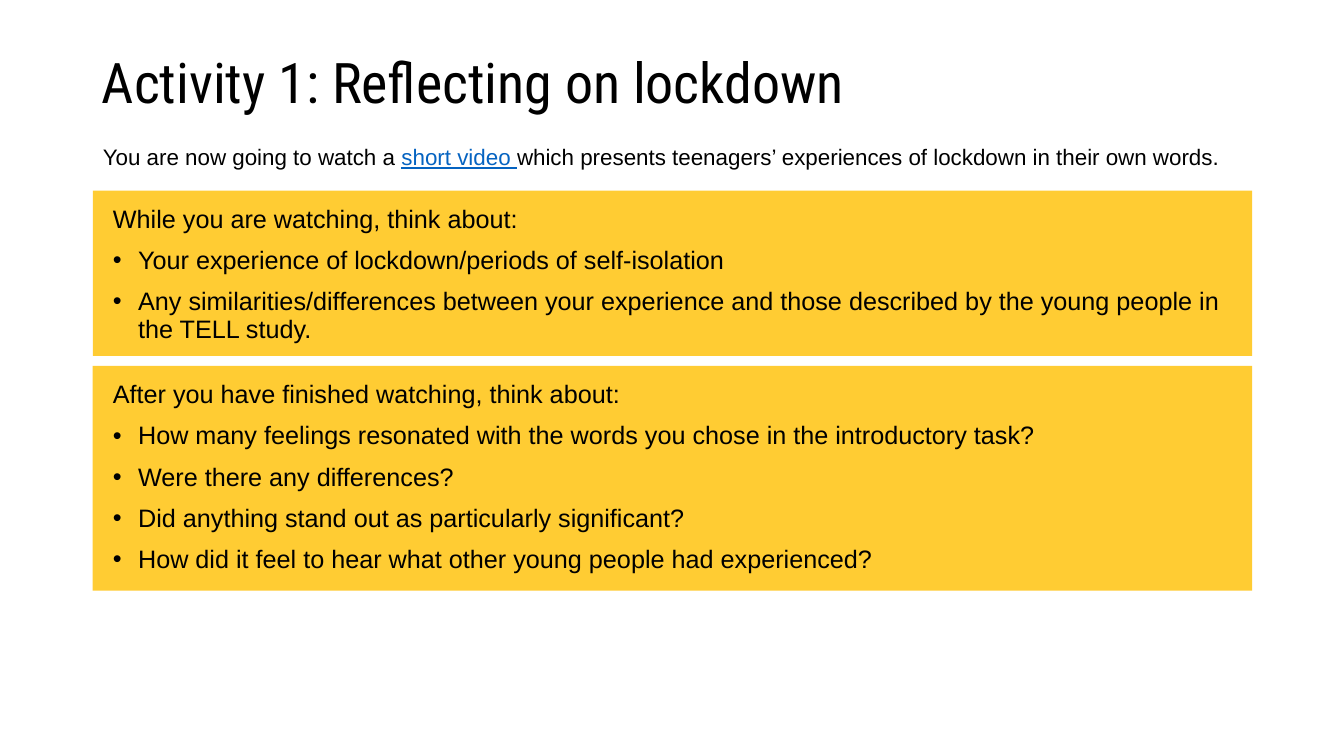
from dataclasses import dataclass

from lxml import etree
from pptx import Presentation
from pptx import util as u
from pptx.dml.color import RGBColor
from pptx.enum import shapes, text
from pptx.oxml import ns


@dataclass(frozen=True)
class Theme:
    ink: RGBColor = RGBColor(0x00, 0x00, 0x00)
    link: RGBColor = RGBColor(0x05, 0x63, 0xC1)
    panel: RGBColor = RGBColor(0xFF, 0xCC, 0x33)
    heading_font: str = "Roboto Condensed"
    body_font: str = "Arial"
    title_size: int = 40
    intro_size: int = 16
    panel_size: int = 18


THEME = Theme()
LEFT, WIDTH = 0.92, 11.5
TITLE = "Activity 1: Reflecting on lockdown"
INTRO = [
    "You are now going to watch a ",
    "short video ",
    "which presents teenagers’ experiences of lockdown in their own words.",
]
WATCHING = [
    "While you are watching, think about:",
    "Your experience of lockdown/periods of self-isolation",
    "Any similarities/differences between your experience and those described "
    "by the young people in the TELL study.",
]
AFTERWARDS = [
    "After you have finished watching, think about:",
    "How many feelings resonated with the words you chose in the introductory task?",
    "Were there any differences?",
    "Did anything stand out as particularly significant?",
    "How did it feel to hear what other young people had experienced?",
]


def place(box, left, top, width, height):
    box.left, box.top = u.Inches(left), u.Inches(top)
    box.width, box.height = u.Inches(width), u.Inches(height)


def set_frame(frame, anchor, insets=(0.1, 0.05, 0.1, 0.05)):
    frame.word_wrap = True
    frame.auto_size = text.MSO_AUTO_SIZE.NONE
    frame.vertical_anchor = anchor
    frame.margin_left, frame.margin_top, frame.margin_right, frame.margin_bottom = (
        u.Inches(inset) for inset in insets
    )


def format_paragraph(paragraph, size, font, bullet=False, space_before=0):
    # Bullet and hanging indent
    props = paragraph._p.get_or_add_pPr()
    indent = u.Inches(0.25) if bullet else 0
    props.set("marL", str(indent))
    props.set("indent", str(-indent))
    if bullet:
        etree.SubElement(props, ns.qn("a:buFont")).set("typeface", "Arial")
        etree.SubElement(props, ns.qn("a:buChar")).set("char", "•")
    else:
        etree.SubElement(props, ns.qn("a:buNone"))

    # Spacing and type
    paragraph.alignment = text.PP_ALIGN.LEFT
    paragraph.line_spacing = 0.9
    paragraph.space_before = u.Pt(space_before)
    for run in paragraph.runs:
        run.font.size = u.Pt(size)
        run.font.name = font
        run.font.color.rgb = THEME.ink


def fill_title(title):
    place(title, 0.91, 0.39, WIDTH, 0.91)
    title.text_frame.text = TITLE
    set_frame(title.text_frame, text.MSO_ANCHOR.MIDDLE)
    format_paragraph(title.text_frame.paragraphs[0], THEME.title_size, THEME.heading_font)


def fill_intro(intro):
    place(intro, LEFT, 1.4, WIDTH, 0.74)
    set_frame(intro.text_frame, text.MSO_ANCHOR.TOP)
    sentence = intro.text_frame.paragraphs[0]
    for phrase in INTRO:
        sentence.add_run().text = phrase
    format_paragraph(sentence, THEME.intro_size, THEME.body_font)
    video_phrase = sentence.runs[1]
    video_phrase.font.color.rgb = THEME.link
    video_phrase.font.underline = True


def fill_panel(panel, top, height, prompts):
    place(panel, LEFT, top, WIDTH, height)
    panel.fill.solid()
    panel.fill.fore_color.rgb = THEME.panel
    panel.line.fill.background()
    panel.text_frame.text = "\n".join(prompts)
    set_frame(panel.text_frame, text.MSO_ANCHOR.TOP, (0.2, 0.16, 0.2, 0.05))
    for position, paragraph in enumerate(panel.text_frame.paragraphs):
        is_prompt = position > 0
        format_paragraph(paragraph, THEME.panel_size, THEME.body_font,
                         bullet=is_prompt, space_before=10 if is_prompt else 0)


def main():
    deck = Presentation()
    deck.slide_width, deck.slide_height = u.Inches(13.33), u.Inches(7.5)
    two_content = deck.slide_layouts[3]
    slide = deck.slides.add_slide(two_content)

    # Title, first panel and introduction
    fill_title(slide.shapes.title)
    fill_panel(slide.placeholders[1], 1.89, 1.64, WATCHING)
    fill_intro(slide.placeholders[2])

    # Second panel
    afterwards = slide.shapes.add_shape(shapes.MSO_SHAPE.RECTANGLE, 0, 0, 0, 0)
    afterwards.shadow.inherit = False
    fill_panel(afterwards, 3.63, 2.23, AFTERWARDS)

    deck.save("out.pptx")


if __name__ == "__main__":
    main()
